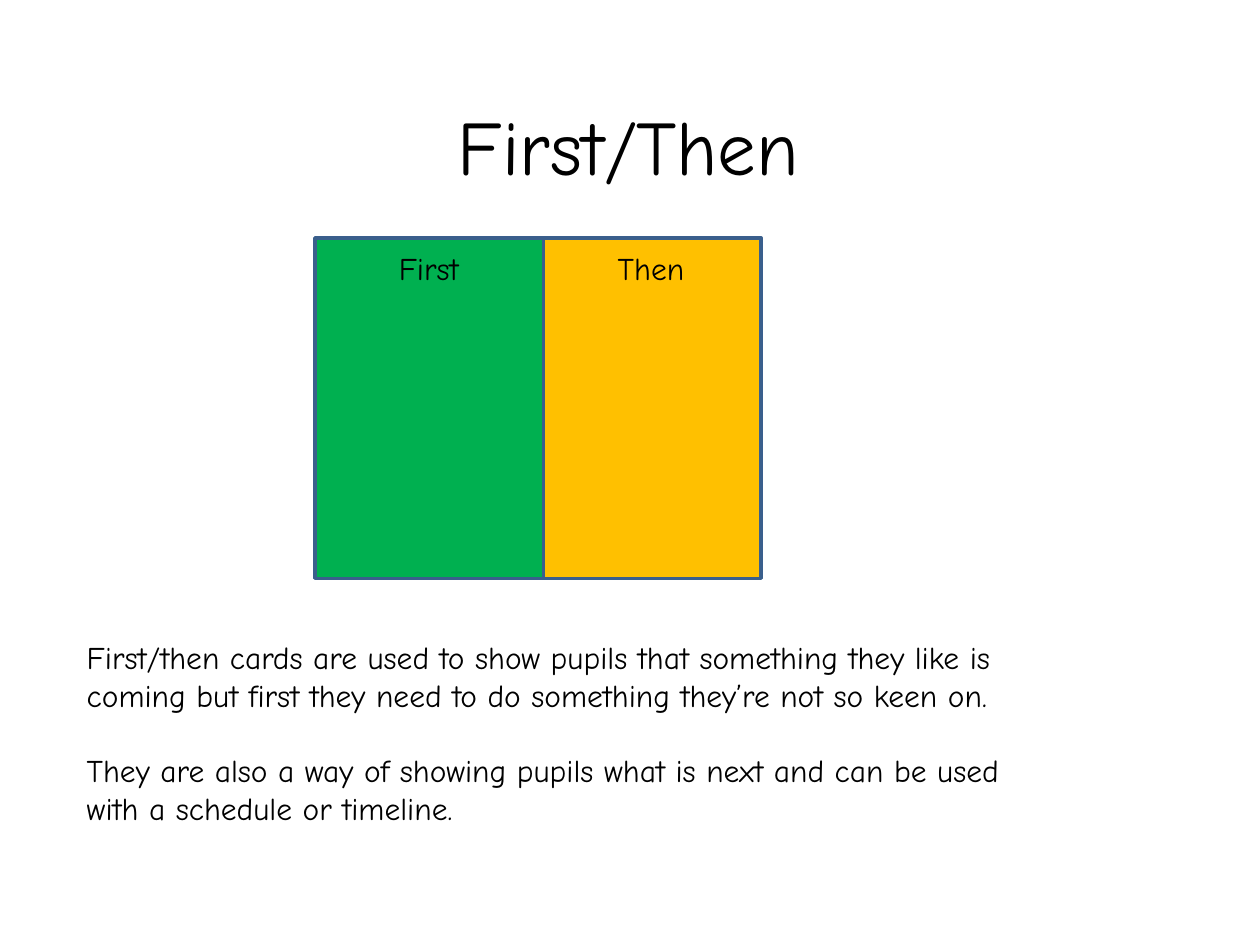
import pptx
import pptx.util
import pptx.dml.color
import pptx.enum.shapes
import pptx.enum.text

Pt = pptx.util.Pt
RGB = pptx.dml.color.RGBColor.from_string
ALIGN = pptx.enum.text.PP_ALIGN
ANCHOR = pptx.enum.text.MSO_ANCHOR
COLORS = {"text": "000000", "first": "00B050", "then": "FFC000", "outline": "3A5F8C"}
FONT = "Comic Neue"


def write(frame, lines, size, align):
    frame.word_wrap = True
    for index, line in enumerate(lines):
        para = frame.paragraphs[0] if index == 0 else frame.add_paragraph()
        para.text = line
        para.alignment = align
        para.font.name = FONT
        para.font.size = Pt(size)
        para.font.color.rgb = RGB(COLORS["text"])


deck = pptx.Presentation()
deck.slide_width, deck.slide_height = Pt(720), Pt(540)
page = deck.slides.add_slide(deck.slide_layouts[5])

# Title
title = page.shapes.title
title.left, title.top, title.width, title.height = Pt(42.5), Pt(37.5), Pt(648), Pt(90)
title.text_frame.vertical_anchor = ANCHOR.MIDDLE
write(title.text_frame, ["First/Then "], 44, ALIGN.CENTER)

# Two halves of the card
card_top, card_height = 136, 194.5
for name, left, width in [("first", 180, 130.5), ("then", 310.5, 124.5)]:
    half = page.shapes.add_shape(pptx.enum.shapes.MSO_SHAPE.RECTANGLE,
                                 Pt(left), Pt(card_top), Pt(width), Pt(card_height))
    half.shadow.inherit = False
    half.fill.solid()
    half.fill.fore_color.rgb = RGB(COLORS[name])
    half.line.color.rgb = RGB(COLORS["outline"])
    half.line.width = Pt(2)

# Card labels
for label, left in [("First", 205.5), ("Then", 332.5)]:
    box = page.shapes.add_textbox(Pt(left), Pt(card_top + 3), Pt(79), Pt(29))
    write(box.text_frame, [label], 18, ALIGN.CENTER)

# Explanation
box = page.shapes.add_textbox(Pt(42.5), Pt(361), Pt(561.5), Pt(138))
write(box.text_frame, [
    "First/then cards are used to show pupils that something they like is coming "
    "but first they need to do something they’re not so keen on.",
    "They are also a way of showing pupils what is next and can be used with a "
    "schedule or timeline.",
], 18, ALIGN.LEFT)
box.text_frame.paragraphs[1].space_before = Pt(21.7)

deck.save("out.pptx")
